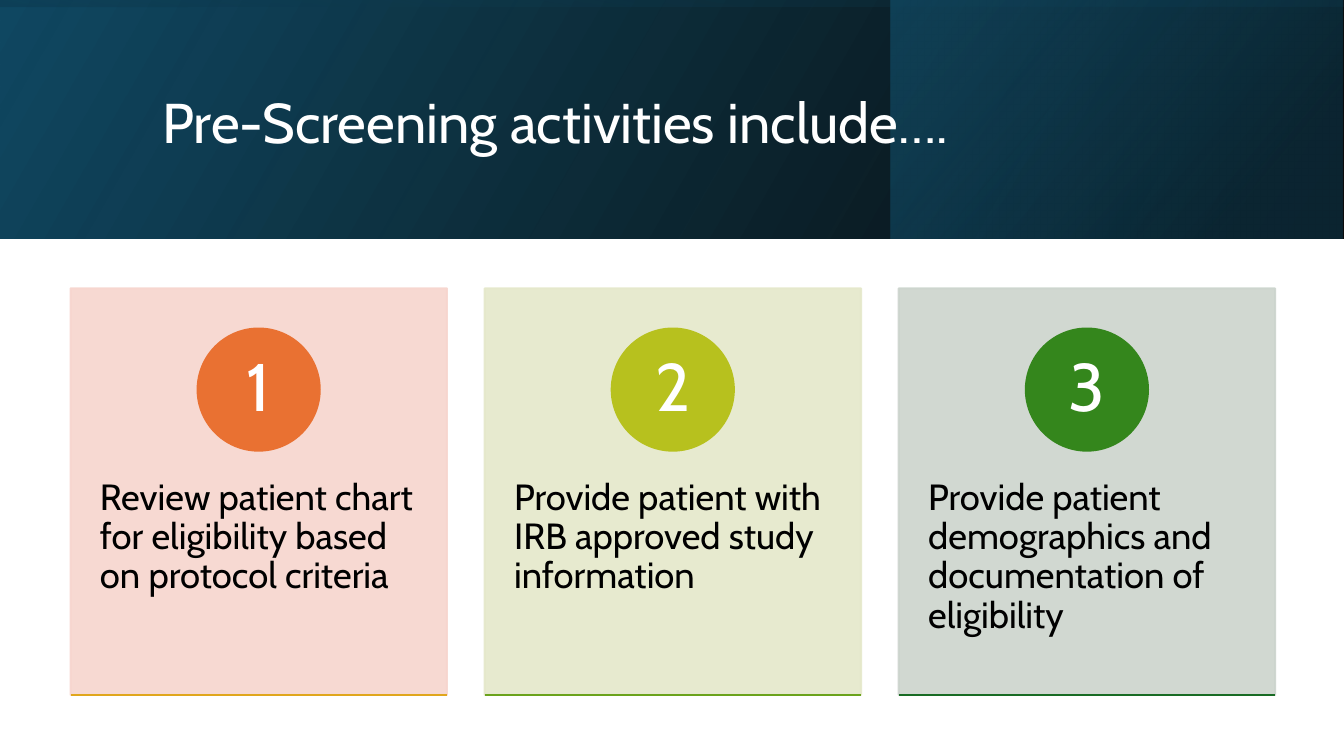
from lxml.etree import SubElement
from pptx import Presentation
from pptx.dml.color import RGBColor
from pptx.enum.shapes import MSO_CONNECTOR, MSO_SHAPE
from pptx.enum.text import MSO_ANCHOR, MSO_AUTO_SIZE, PP_ALIGN
from pptx.oxml.ns import qn
from pptx.util import Pt

FONT = "Cabin"
COLORS = {
    "white": "FFFFFF", "black": "000000",
    "navy": "104862", "deep": "0B3041", "teal": "156082",
    "rose": "F7D5CE", "orange": "E97132", "amber": "E0A61D",
    "lime_tint": "E5E8CA", "lime": "B7C11E", "leaf": "6BA31D",
    "sage": "CCD4CD", "green": "34861C", "forest": "196B24",
}
BANDS = [
    ((0, 0, 960, 170.6), 0, 330, [(0, "black", 96), (100, "navy", 100)]),
    ((636.5, 0, 322.6, 170.6), 0, 320, [(19, "deep", 68), (100, "teal", 48)]),
    ((394.6, -394.6, 170.6, 960), 270, 350, [(23, "navy", 16), (99, "black", 45)]),
]
STEPS = [
    ("Review patient chart for eligibility based on protocol criteria",
     "rose", "orange", "amber"),
    ("Provide patient with IRB approved study information",
     "lime_tint", "lime", "leaf"),
    ("Provide patient demographics and documentation of eligibility",
     "sage", "green", "forest"),
]
CARD_LEFT, CARD_TOP, CARD_WIDTH, CARD_HEIGHT = 50.4, 206, 268.8, 290.4
CARD_PITCH = 295.8
BADGE_TOP, BADGE_SIZE = 234.7, 87.2
STEP_TOP, STEP_HEIGHT = 316, 174.2
RULE_TOP = 496.6


def rgb(color):
    return RGBColor.from_string(COLORS[color])


def set_alpha(color_element, percent):
    SubElement(color_element, qn("a:alpha")).set("val", str(percent * 1000))


def write_text(holder, text, size, color="black", align=PP_ALIGN.LEFT,
               anchor=MSO_ANCHOR.TOP, inset_x=7.2, inset_y=3.6):
    frame = holder.text_frame
    frame.word_wrap = True
    frame.auto_size = MSO_AUTO_SIZE.NONE
    frame.vertical_anchor = anchor
    frame.margin_left = frame.margin_right = Pt(inset_x)
    frame.margin_top = frame.margin_bottom = Pt(inset_y)
    paragraph = frame.paragraphs[0]
    paragraph.alignment = align
    paragraph.line_spacing = 0.9
    run = paragraph.add_run()
    run.text = text
    run.font.name = FONT
    run.font.size = Pt(size)
    run.font.color.rgb = rgb(color)


def add_solid(slide, preset, box, color, alpha=100):
    solid = slide.shapes.add_shape(preset, *map(Pt, box))
    solid.shadow.inherit = False
    solid.fill.solid()
    solid.fill.fore_color.rgb = rgb(color)
    solid.line.color.rgb = rgb(color)
    solid.line.width = Pt(1.5)
    if alpha < 100:
        for color_element in solid.element.spPr.iter(qn("a:srgbClr")):
            set_alpha(color_element, alpha)
    return solid


def add_band(slide, box, rotation, angle, stops):
    band = slide.shapes.add_shape(MSO_SHAPE.RECTANGLE, *map(Pt, box))
    band.shadow.inherit = False
    band.line.fill.background()
    band.rotation = rotation
    properties = band.element.spPr
    properties.find(qn("a:xfrm")).set("flipH", "1")
    band.fill.gradient()
    gradient = properties.find(qn("a:gradFill"))
    for child in list(gradient):
        gradient.remove(child)
    stop_list = SubElement(gradient, qn("a:gsLst"))
    for position, color, alpha in stops:
        stop = SubElement(stop_list, qn("a:gs"))
        stop.set("pos", str(position * 1000))
        color_element = SubElement(stop, qn("a:srgbClr"))
        color_element.set("val", COLORS[color])
        set_alpha(color_element, alpha)
    direction = SubElement(gradient, qn("a:lin"))
    direction.set("ang", str(angle * 60000))
    direction.set("scaled", "0")


def add_title(slide, text):
    title = slide.shapes.title
    title.left, title.top, title.width, title.height = map(
        Pt, (108.7, 27.4, 765.4, 123.8))
    write_text(title, text, 40, color="white", anchor=MSO_ANCHOR.MIDDLE)
    title.element.getparent().append(title.element)


def add_rule(slide, left, color):
    rule = slide.shapes.add_connector(
        MSO_CONNECTOR.STRAIGHT, Pt(left), Pt(RULE_TOP),
        Pt(left + CARD_WIDTH), Pt(RULE_TOP))
    rule.line.color.rgb = rgb(color)
    rule.line.width = Pt(1.5)
    SubElement(rule.element.spPr, qn("a:effectLst"))


def add_step(slide, index, text, tint, badge_color, rule_color):
    left = CARD_LEFT + index * CARD_PITCH
    add_solid(slide, MSO_SHAPE.RECTANGLE,
              (left, CARD_TOP, CARD_WIDTH, CARD_HEIGHT), tint, alpha=90)
    step = slide.shapes.add_textbox(
        *map(Pt, (left, STEP_TOP, CARD_WIDTH, STEP_HEIGHT)))
    write_text(step, text, 26, inset_x=21, inset_y=26)
    badge_left = left + (CARD_WIDTH - BADGE_SIZE) / 2
    badge = add_solid(slide, MSO_SHAPE.OVAL,
                      (badge_left, BADGE_TOP, BADGE_SIZE, BADGE_SIZE), badge_color)
    write_text(badge, str(index + 1), 48, color="white", align=PP_ALIGN.CENTER,
               anchor=MSO_ANCHOR.MIDDLE, inset_x=0, inset_y=0)
    add_rule(slide, left, rule_color)


def main():
    presentation = Presentation()
    presentation.slide_width = Pt(960)
    presentation.slide_height = Pt(540)
    slide = presentation.slides.add_slide(presentation.slide_layouts[5])
    for band in BANDS:
        add_band(slide, *band)
    add_title(slide, "Pre-Screening activities include….")
    for index, step in enumerate(STEPS):
        add_step(slide, index, *step)
    presentation.save("out.pptx")


if __name__ == "__main__":
    main()
